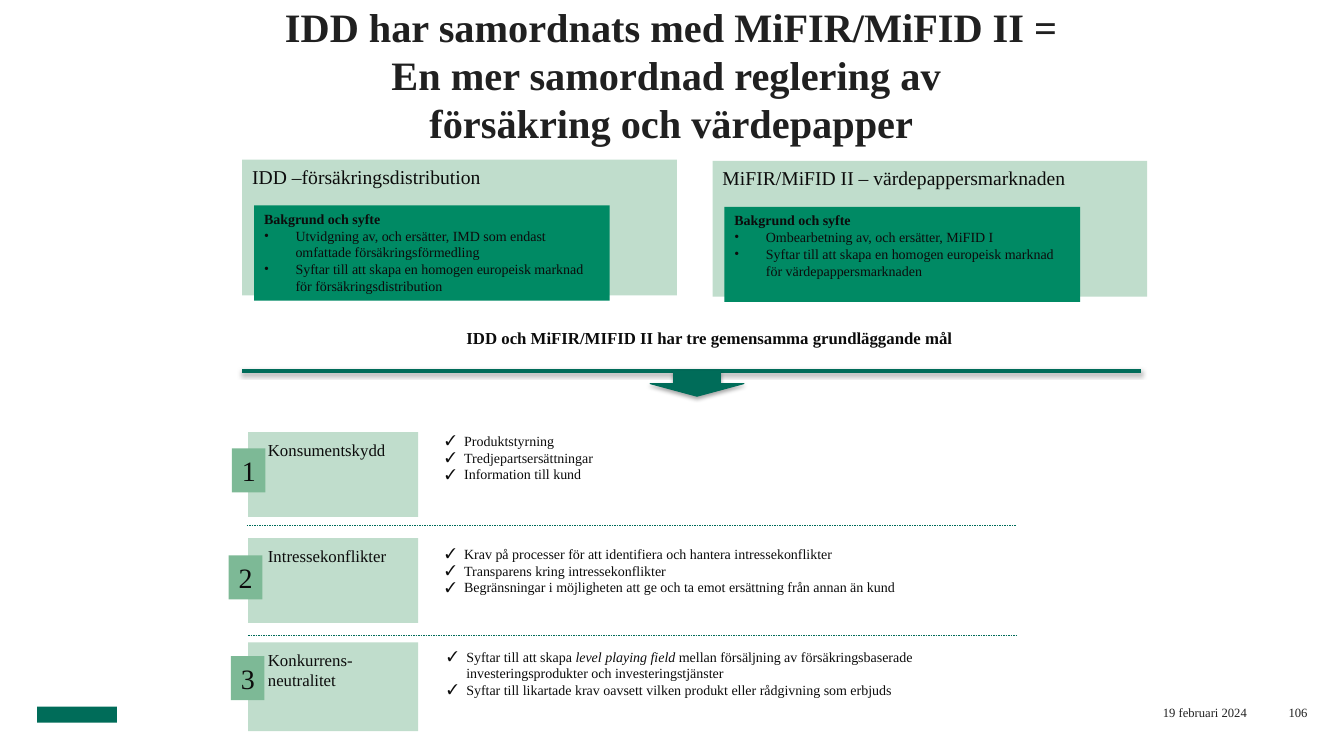
from lxml.etree import SubElement
from pptx import Presentation
from pptx.dml.color import RGBColor
from pptx.enum.dml import MSO_LINE
from pptx.enum.shapes import MSO_CONNECTOR, MSO_SHAPE
from pptx.enum.text import MSO_ANCHOR, MSO_AUTO_SIZE, PP_ALIGN
from pptx.oxml.ns import qn
from pptx.util import Pt

INK = RGBColor(0x0C, 0x0C, 0x0C)
TITLE_INK = RGBColor(0x20, 0x20, 0x20)
DARK_GREEN = RGBColor(0x00, 0x6C, 0x59)
GREEN = RGBColor(0x00, 0x8A, 0x64)
MID_GREEN = RGBColor(0x7D, 0xB9, 0x96)
PALE_GREEN = RGBColor(0xC0, 0xDD, 0xCC)
FONT = "Times New Roman"


class SlideBuilder:
    """Holds the slide and its style; all lengths are in points."""

    def __init__(self, slide):
        self.slide = slide

    def paragraph(self, frame, text, size, color=INK, bold=False,
                  align=PP_ALIGN.LEFT, indent=0, bullet=None):
        """Add a paragraph; text between asterisks is italic, \\n breaks a line."""
        first = frame.paragraphs[0]
        para = first if not first.runs else frame.add_paragraph()
        for row, line in enumerate(text.split("\n")):
            if row:
                para.add_line_break()
            for i, part in enumerate(line.split("*")):
                run = para.add_run()
                run.text = part
                if i % 2:
                    run.font.italic = True
        para.alignment = align
        font = para.font
        font.name, font.size, font.bold = FONT, Pt(size), bold
        font.color.rgb = color
        props = para._p.get_or_add_pPr()
        if indent:
            props.set("marL", str(Pt(indent)))
        if bullet:
            props.set("indent", str(-Pt(indent)))
            props.insert(0, props.makeelement(qn("a:buFont"), {"typeface": FONT}))
            props.insert(1, props.makeelement(qn("a:buChar"), {"char": bullet}))

    def frame(self, shape, inset=True):
        frame = shape.text_frame
        frame.word_wrap = True
        frame.vertical_anchor = MSO_ANCHOR.TOP
        if not inset:
            frame.margin_left = frame.margin_right = 0
            frame.margin_top = frame.margin_bottom = 0
        return frame

    def title(self, text, x, y, w, h, size):
        title = self.slide.shapes.title
        title.left, title.top, title.width, title.height = map(Pt, (x, y, w, h))
        frame = self.frame(title, inset=False)
        frame.auto_size = MSO_AUTO_SIZE.NONE
        frame.vertical_anchor = MSO_ANCHOR.BOTTOM
        self.paragraph(frame, text, size, TITLE_INK, True, PP_ALIGN.CENTER)

    def block(self, x, y, w, h, fill, kind=MSO_SHAPE.RECTANGLE):
        block = self.slide.shapes.add_shape(kind, *map(Pt, (x, y, w, h)))
        block.shadow.inherit = False
        block.fill.solid()
        block.fill.fore_color.rgb = fill
        block.line.fill.background()
        return block

    def label(self, text, x, y, w, h, fill, size, indent=0):
        frame = self.frame(self.block(x, y, w, h, fill))
        self.paragraph(frame, text, size, indent=indent)
        return frame

    def textbox(self, x, y, w, h, inset=True):
        box = self.slide.shapes.add_textbox(*map(Pt, (x, y, w, h)))
        return self.frame(box, inset)

    def bullets(self, frame, items, indent, bullet):
        for item in items:
            self.paragraph(frame, item, 10, indent=indent, bullet=bullet)

    def rule(self, x1, x2, y, width, dash=None):
        rule = self.slide.shapes.add_connector(
            MSO_CONNECTOR.STRAIGHT, *map(Pt, (x1, y, x2, y)))
        rule.line.color.rgb = DARK_GREEN
        rule.line.width = Pt(width)
        if dash:
            rule.line.dash_style = dash
        self.soft_shadow(SubElement(rule._element.spPr, qn("a:effectLst")), 38, 1.6)

    def soft_shadow(self, effects, opacity, distance):
        shadow = SubElement(effects, qn("a:outerShdw"), blurRad=str(Pt(3.1)),
                            dist=str(Pt(distance)), dir="5400000", rotWithShape="0")
        color = SubElement(shadow, qn("a:srgbClr"), val="000000")
        SubElement(color, qn("a:alpha"), val=str(opacity * 1000))

    def arrow(self, x, y, w, h):
        arrow = self.block(x, y, w, h, DARK_GREEN, MSO_SHAPE.DOWN_ARROW)
        arrow.line.color.rgb = DARK_GREEN
        arrow.line.width = Pt(0.75)
        self.soft_shadow(arrow._element.spPr.find(qn("a:effectLst")), 35, 1.8)


REGULATIONS = [
    (173, 114, "IDD –försäkringsdistribution",
     ["Utvidgning av, och ersätter, IMD som endast omfattade försäkringsförmedling",
      "Syftar till att skapa en homogen europeisk marknad för försäkringsdistribution"]),
    (509, 115, "MiFIR/MiFID II – värdepappersmarknaden",
     ["Ombearbetning av, och ersätter, MiFID I",
      "Syftar till att skapa en homogen europeisk marknad för värdepappersmarknaden"]),
]

# Name, top and height of label; number corner; list corner and width; items
GOALS = [
    ("Konsumentskydd", 308.7, 60.5, (165.6, 320.2), (311, 305.3, 135),
     ["Produktstyrning", "Tredjepartsersättningar", "Information till kund"]),
    ("Intressekonflikter", 384.5, 60.5, (163.4, 396.7), (311, 386, 374),
     ["Krav på processer för att identifiera och hantera intressekonflikter",
      "Transparens kring intressekonflikter",
      "Begränsningar i möjligheten att ge och ta emot ersättning från annan än kund"]),
    ("Konkurrens-\nneutralitet", 458.8, 63.4, (164.9, 468.7), (312.5, 459.4, 414),
     ["Syftar till att skapa *level playing field* mellan försäljning av "
      "försäkringsbaserade investeringsprodukter och investeringstjänster",
      "Syftar till likartade krav oavsett vilken produkt eller rådgivning som erbjuds"]),
]


def main():
    deck = Presentation()
    deck.slide_width, deck.slide_height = Pt(960), Pt(540)
    page = SlideBuilder(deck.slides.add_slide(deck.slide_layouts[5]))

    # Footer: plain mark, date and page number
    page.block(26.6, 504.7, 57, 11.5, DARK_GREEN)
    for text, x, w in [("19 februari 2024", 772, 118.6), ("106", 916.6, 17.3)]:
        page.paragraph(page.textbox(x, 503.3, w, 13, inset=False), text, 9,
                       TITLE_INK, align=PP_ALIGN.RIGHT)

    page.title("IDD har samordnats med MiFIR/MiFID II =\nEn mer samordnad "
               "reglering av \nförsäkring och värdepapper", 128, 49, 703, 56, 28.8)

    # The two regulations
    for x, y, name, purposes in REGULATIONS:
        page.label(name, x, y, 310.5, 97, PALE_GREEN, 14)
        background = page.frame(page.block(x + 8.5, y + 32.7, 254, 68, GREEN))
        page.paragraph(background, "Bakgrund och syfte", 10, bold=True)
        page.bullets(background, purposes, 22.5, "•")

    # Shared aims
    page.paragraph(page.textbox(317, 230.8, 380, 21.6),
                   "IDD och MiFIR/MIFID II har tre gemensamma grundläggande mål",
                   12, bold=True, align=PP_ALIGN.CENTER)
    page.rule(173, 815, 265, 3)
    page.arrow(464.4, 265, 67, 18)

    # The three numbered goals
    for number, (name, y, h, corner, (x, top, w), items) in enumerate(GOALS, 1):
        goal = page.label(name, 177.3, y, 121.5, h, PALE_GREEN, 12, indent=7)
        goal.margin_top = Pt(5.5)
        page.label(str(number), *corner, 24, 31.5, MID_GREEN, 20)
        page.bullets(page.textbox(x, top, w, 44), items, 13.5, "✓")
    for x, y in [(176.4, 375.1), (177.3, 453.6)]:
        page.rule(x, x + 549, y, 0.25, MSO_LINE.DASH)

    deck.save("out.pptx")


if __name__ == "__main__":
    main()
